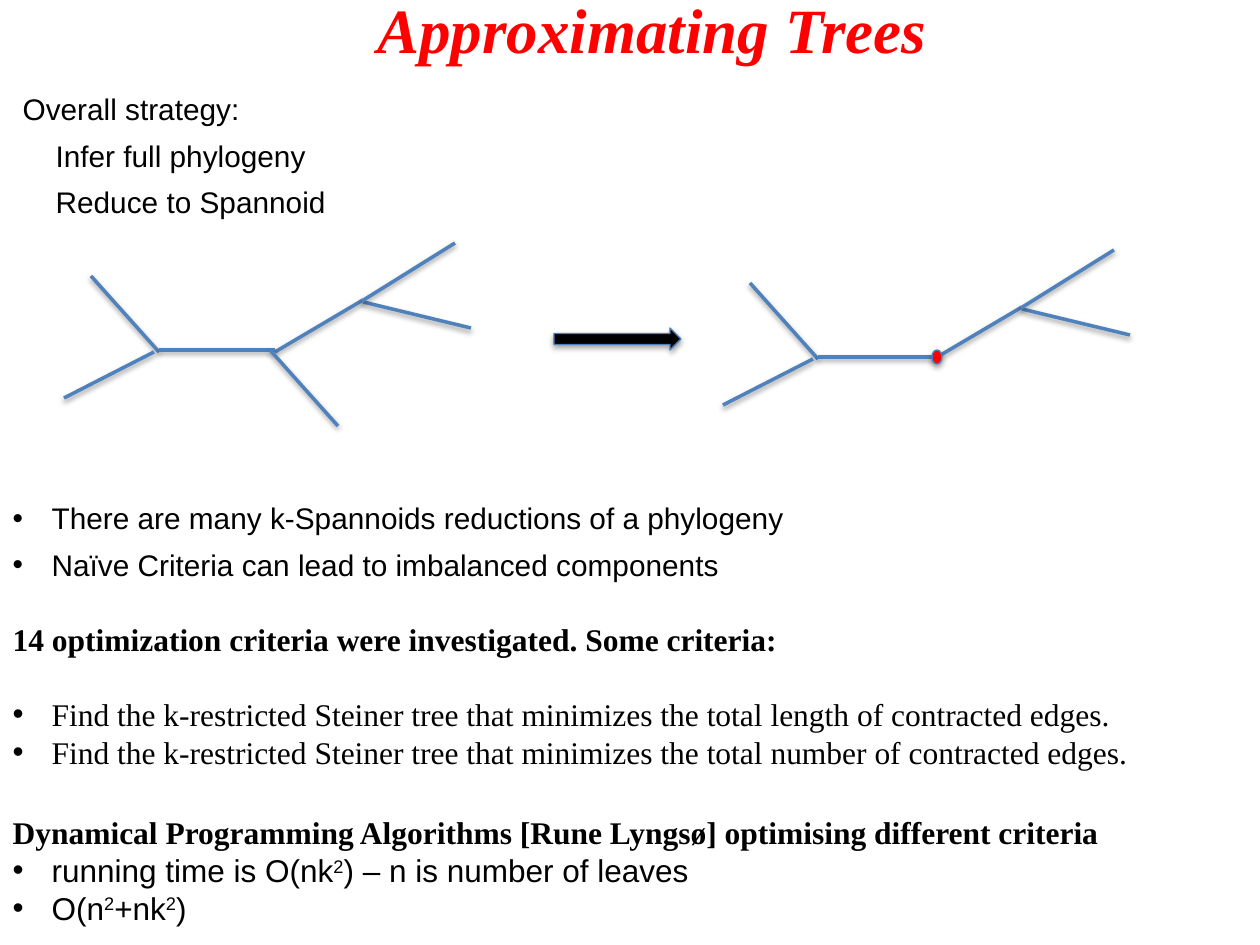
from lxml import etree
from pptx import Presentation
from pptx import util as u
from pptx.dml.color import RGBColor
from pptx.enum import shapes, text
from pptx.oxml.ns import qn

PX = 914400 / 126
RED = RGBColor(0xFF, 0, 0)
BLACK = RGBColor(0, 0, 0)
BLUE = RGBColor(0x4F, 0x81, 0xBD)
EDGE = RGBColor(0x4B, 0x7E, 0xBC)
HANG = 39

SANS = {"name": "Arial", "size": u.Pt(17), "bold": False}
SERIF = {"name": "Times New Roman", "size": u.Pt(18), "bold": False}
HEAD = {**SERIF, "bold": True}
LARGE = {**SANS, "size": u.Pt(18)}
TITLE = {**HEAD, "size": u.Pt(36), "italic": True}

# Branches as x1, y1, x2, y2 inside the box of a tree
TREE = [
    (27, 33, 95, 109), (211, 109, 299, 57), (95, 107, 211, 107),
    (0, 155, 90, 109), (299, 59, 407, 85), (298, 58, 391, 0),
]
TWIG = (206, 107, 274, 183)


def px(*nums):
    return [u.Emu(round(n * PX)) for n in nums]


def assign(item, values):
    for key, value in values.items():
        setattr(item, key, value)


def place(holder, box, wrap=True):
    """Move a placeholder and give it a plain, top-aligned frame."""
    assign(holder, dict(zip(("left", "top", "width", "height"), px(*box))))
    assign(holder.text_frame, {
        "word_wrap": wrap,
        "auto_size": text.MSO_AUTO_SIZE.NONE,
        "vertical_anchor": text.MSO_ANCHOR.TOP,
    })
    return holder.text_frame


def write(para, words, form, color=BLACK):
    """Add runs; each part between a pair of ^ marks is superscript."""
    for i, part in enumerate(words.split("^")):
        run = para.add_run()
        run.text = part
        assign(run.font, form)
        run.font.color.rgb = color
        if i % 2:
            run._r.get_or_add_rPr().set("baseline", "30000")


def indent(para, left, bullet):
    props = para._p.get_or_add_pPr()
    hang = -left if bullet else 0
    props.set("marL", str(px(left)[0]))
    props.set("indent", str(px(hang)[0]))
    if bullet:
        etree.SubElement(props, qn("a:buFont")).set("typeface", "Arial")
        etree.SubElement(props, qn("a:buChar")).set("char", "•")
    else:
        etree.SubElement(props, qn("a:buNone"))


def fill_list(holder, box, lines, pitch=1.0):
    """Each line is words, format, left indent, bullet, points before."""
    frame = place(holder, box)
    for i, (words, form, left, bullet, gap) in enumerate(lines):
        para = frame.add_paragraph() if i else frame.paragraphs[0]
        assign(para, {
            "alignment": text.PP_ALIGN.LEFT,
            "line_spacing": pitch,
            "space_before": u.Pt(gap),
            "space_after": u.Pt(0),
        })
        indent(para, left, bullet)
        write(para, words, form)


def add_title(holder, box):
    para = place(holder, box, wrap=False).paragraphs[0]
    para.alignment = text.PP_ALIGN.CENTER
    write(para, "Approximating Trees", TITLE, RED)


def add_tree(slide, left, top, lines):
    """Draw the branches; they keep the soft shadow of the theme."""
    group = slide.shapes.add_group_shape()
    for x1, y1, x2, y2 in lines:
        branch = group.shapes.add_connector(
            shapes.MSO_CONNECTOR.STRAIGHT,
            *px(left + x1, top + y1, left + x2, top + y2))
        branch.line.color.rgb = BLUE
        branch.line.width = u.Pt(2)
    return group


def add_mark(parent, kind, box, color):
    """Add a filled shape that keeps the soft shadow of the theme."""
    mark = parent.shapes.add_shape(kind, *px(*box))
    mark.fill.solid()
    mark.fill.fore_color.rgb = color
    mark.line.color.rgb = EDGE
    mark.line.width = u.Pt(0.75)


def add_step(slide, left, top):
    """Draw the full tree, the arrow and the reduced tree."""
    add_tree(slide, left, top, TREE + [TWIG])
    x, y = left + 659, top + 7
    small = add_tree(slide, x, y, TREE)
    add_mark(small, shapes.MSO_SHAPE.OVAL, (x + 209, y + 100, 10, 14), RED)
    add_mark(slide, shapes.MSO_SHAPE.RIGHT_ARROW,
             (left + 490, top + 85, 127, 22), BLACK)


def main():
    deck = Presentation()
    deck.slide_width, deck.slide_height = px(1260, 945)
    slide = deck.slides.add_slide(deck.slide_layouts[4])
    title, plan, notes, goals, speed = slide.placeholders

    add_title(title, (358, -16, 588, 89))
    fill_list(plan, (10, 74, 1250, 151), [
        ("Overall strategy:", SANS, 0, False, 0),
        ("Infer full phylogeny", SANS, 33, False, 0),
        ("Reduce to Spannoid", SANS, 33, False, 0),
    ], 1.3)
    add_step(slide, 64, 243)
    fill_list(notes, (0, 483, 844, 105), [
        ("There are many k-Spannoids reductions of a phylogeny",
         SANS, HANG, True, 0),
        ("Naïve Criteria can lead to imbalanced components",
         SANS, HANG, True, 0),
    ], 1.3)
    goal = ("Find the k-restricted Steiner tree that minimizes "
            "the total {} of contracted edges.")
    fill_list(goals, (0, 614, 1260, 165), [
        ("14 optimization criteria were investigated. Some criteria:",
         HEAD, 0, False, 0),
        (goal.format("length"), SERIF, HANG, True, 21),
        (goal.format("number"), SERIF, HANG, True, 0),
    ])
    fill_list(speed, (0, 807, 1260, 127), [
        ("Dynamical Programming Algorithms [Rune Lyngsø] "
         "optimising different criteria", HEAD, 0, False, 0),
        ("running time is O(nk^2^) – n is number of leaves",
         LARGE, HANG, True, 0),
        ("O(n^2^+nk^2^)", LARGE, HANG, True, 0),
    ])
    deck.save("out.pptx")


if __name__ == "__main__":
    main()
